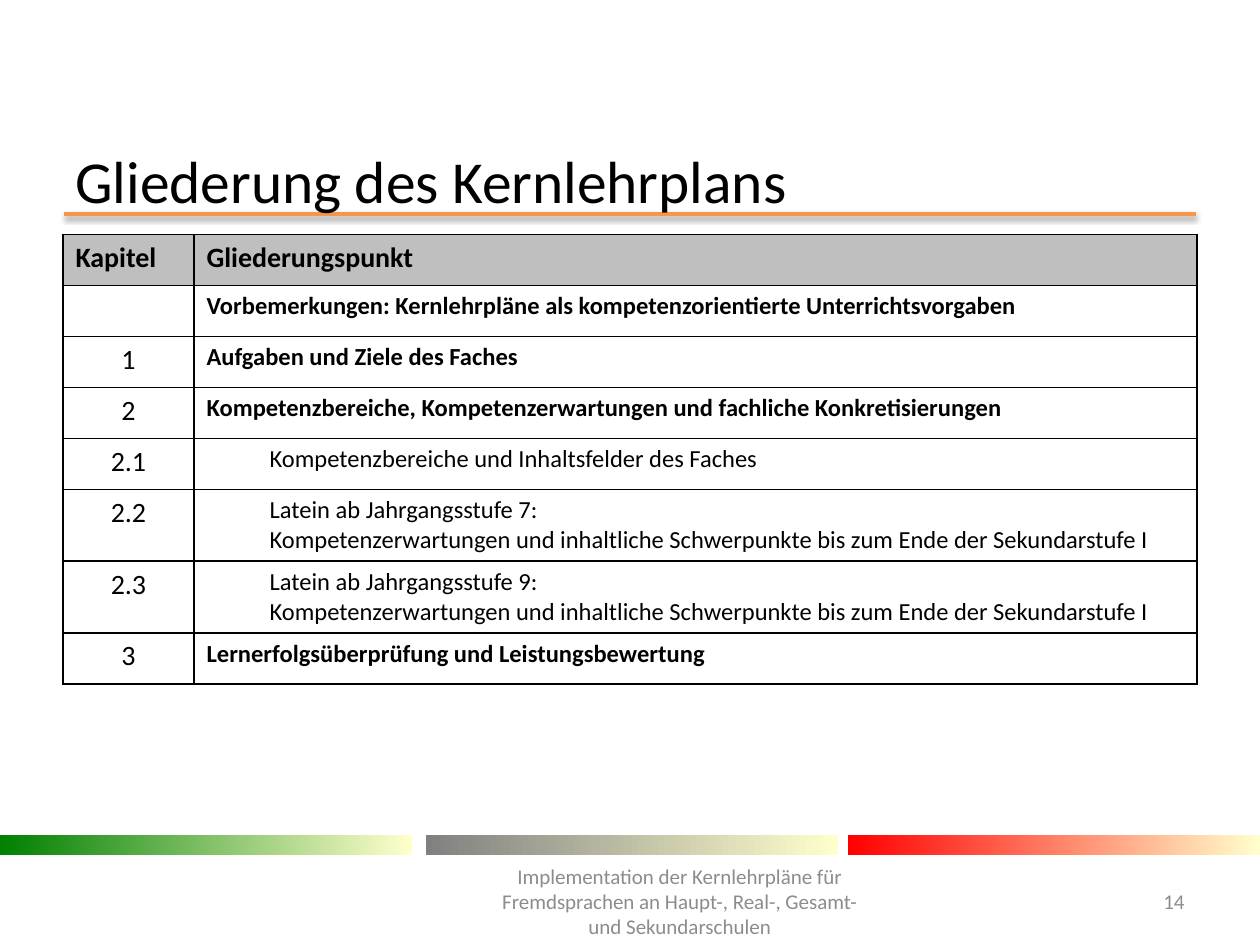
"""Build the slide that outlines the chapters of the core curriculum."""
from dataclasses import dataclass

from lxml import etree
from pptx import Presentation
from pptx.dml.color import RGBColor
from pptx.enum.shapes import MSO_CONNECTOR, MSO_SHAPE
from pptx.enum.text import MSO_ANCHOR, PP_ALIGN
from pptx.oxml import parse_xml
from pptx.oxml.ns import nsdecls, qn
from pptx.util import Inches, Pt

LEFT, CENTER, RIGHT = PP_ALIGN.LEFT, PP_ALIGN.CENTER, PP_ALIGN.RIGHT
MIDDLE = MSO_ANCHOR.MIDDLE
RECTANGLE = MSO_SHAPE.RECTANGLE
STRAIGHT = MSO_CONNECTOR.STRAIGHT


@dataclass(frozen=True)
class Theme:
    font: str = "Calibri"
    text: str = "000000"
    muted: str = "8C8C8C"
    accent: str = "F79646"
    header: str = "BFBFBF"
    paper: str = "FFFFFF"
    fade: str = "FFFFCC"
    title_size: int = 34
    chapter_size: int = 16
    entry_size: int = 14
    footer_size: int = 12


@dataclass(frozen=True)
class Label:
    text: str
    left: float
    top: float
    width: float
    height: float
    size: int
    color: str
    align: PP_ALIGN


@dataclass(frozen=True)
class Bar:
    left: float
    color: str


@dataclass(frozen=True)
class Entry:
    chapter: str
    lines: tuple[str, ...]
    indented: bool = False


THEME = Theme()
LABELS = (
    Label("Gliederung des Kernlehrplans", 0.5, 1.23, 9, 0.39,
          THEME.title_size, THEME.text, LEFT),
    Label("14", 8.86, 6.95, 0.64, 0.4, THEME.footer_size, THEME.muted, RIGHT),
    Label("Implementation der Kernlehrpläne für Fremdsprachen an Haupt-, Real-, "
          "Gesamt- und Sekundarschulen", 3.82, 6.95, 3.15, 0.4,
          THEME.footer_size, THEME.muted, CENTER),
)
BARS = (Bar(0, "008000"), Bar(3.38, "808080"), Bar(6.73, "FF0000"))
EXPECTATIONS = ("Kompetenzerwartungen und inhaltliche Schwerpunkte "
                "bis zum Ende der Sekundarstufe I")
HEADINGS = ("Kapitel", "Gliederungspunkt")
ENTRIES = (
    Entry("", ("Vorbemerkungen: Kernlehrpläne als kompetenzorientierte "
               "Unterrichtsvorgaben",)),
    Entry("1", ("Aufgaben und Ziele des Faches",)),
    Entry("2", ("Kompetenzbereiche, Kompetenzerwartungen und fachliche "
                "Konkretisierungen",)),
    Entry("2.1", ("Kompetenzbereiche und Inhaltsfelder des Faches",), True),
    Entry("2.2", ("Latein ab Jahrgangsstufe 7:", EXPECTATIONS), True),
    Entry("2.3", ("Latein ab Jahrgangsstufe 9:", EXPECTATIONS), True),
    Entry("3", ("Lernerfolgsüberprüfung und Leistungsbewertung",)),
)
COLUMN_WIDTHS = (1.04, 7.96)
ROW_HEIGHTS = {1: 0.405, 2: 0.57}


def add_span(para, text: str, size: int, color: str = THEME.text,
             bold: bool = False) -> None:
    span = para.add_run()
    span.text = text
    span.font.name = THEME.font
    span.font.size = Pt(size)
    span.font.bold = bold
    span.font.color.rgb = RGBColor.from_string(color)


def draw_label(page, label: Label) -> None:
    box = page.shapes.add_textbox(Inches(label.left), Inches(label.top),
                                  Inches(label.width), Inches(label.height))
    frame = box.text_frame
    frame.word_wrap = True
    frame.vertical_anchor = MIDDLE
    para = frame.paragraphs[0]
    para.alignment = label.align
    add_span(para, label.text, label.size, label.color)


def draw_rule(page) -> None:
    rule = page.shapes.add_connector(STRAIGHT, Inches(0.51), Inches(1.7),
                                     Inches(9.49), Inches(1.7))
    rule.line.color.rgb = RGBColor.from_string(THEME.accent)
    rule.line.width = Pt(2)
    rule._element.spPr.append(parse_xml(
        f'<a:effectLst {nsdecls("a")}>'
        f'<a:outerShdw blurRad="{Pt(3.1)}" dist="{Pt(1.6)}" dir="5400000" '
        f'rotWithShape="0"><a:srgbClr val="{THEME.text}">'
        '<a:alpha val="38000"/></a:srgbClr></a:outerShdw></a:effectLst>'))


def draw_bar(page, bar: Bar) -> None:
    shape = page.shapes.add_shape(RECTANGLE, Inches(bar.left), Inches(6.63),
                                  Inches(3.27), Inches(0.16))
    shape.shadow.inherit = False
    shape.line.fill.background()
    shape.fill.gradient()
    shape.fill.gradient_angle = 0
    for stop, color in zip(shape.fill.gradient_stops, (bar.color, THEME.fade)):
        stop.color.rgb = RGBColor.from_string(color)


def style_cell(cell, color: str) -> None:
    properties = cell._tc.get_or_add_tcPr()
    for side in ("lnL", "lnR", "lnT", "lnB"):
        border = etree.SubElement(properties, qn(f"a:{side}"), w=str(Pt(1)))
        fill = etree.SubElement(border, qn("a:solidFill"))
        etree.SubElement(fill, qn("a:srgbClr"), val=THEME.text)
    cell.fill.solid()
    cell.fill.fore_color.rgb = RGBColor.from_string(color)


def fill_entry(row, entry: Entry) -> None:
    chapter, topic = row.cells
    para = chapter.text_frame.paragraphs[0]
    para.alignment = CENTER
    if entry.chapter:
        add_span(para, entry.chapter, THEME.chapter_size)
    para = topic.text_frame.paragraphs[0]
    if entry.indented:
        para.level = 1
        indent = para._p.get_or_add_pPr()
        indent.set("marL", str(Inches(0.5)))
        indent.set("indent", "0")
    for index, line in enumerate(entry.lines):
        if index:
            para.add_line_break()
        add_span(para, line, THEME.entry_size, bold=not entry.indented)


def draw_outline(page) -> None:
    heights = [ROW_HEIGHTS[1]] + [ROW_HEIGHTS[len(entry.lines)] for entry in ENTRIES]
    table = page.shapes.add_table(
        len(heights), len(COLUMN_WIDTHS), Inches(0.5), Inches(1.86),
        Inches(sum(COLUMN_WIDTHS)), Inches(sum(heights))).table
    table.horz_banding = False
    for column, width in zip(table.columns, COLUMN_WIDTHS):
        column.width = Inches(width)
    for index, (row, height) in enumerate(zip(table.rows, heights)):
        row.height = Inches(height)
        for cell in row.cells:
            style_cell(cell, THEME.paper if index else THEME.header)
    for cell, heading in zip(table.rows[0].cells, HEADINGS):
        add_span(cell.text_frame.paragraphs[0], heading, THEME.chapter_size, bold=True)
    for index, entry in enumerate(ENTRIES, start=1):
        fill_entry(table.rows[index], entry)


def main() -> None:
    deck = Presentation()
    deck.slide_width, deck.slide_height = Inches(10), Inches(7.5)
    page = deck.slides.add_slide(deck.slide_layouts[6])
    draw_rule(page)
    for bar in BARS:
        draw_bar(page, bar)
    for label in LABELS:
        draw_label(page, label)
    draw_outline(page)
    deck.save("out.pptx")


if __name__ == "__main__":
    main()
